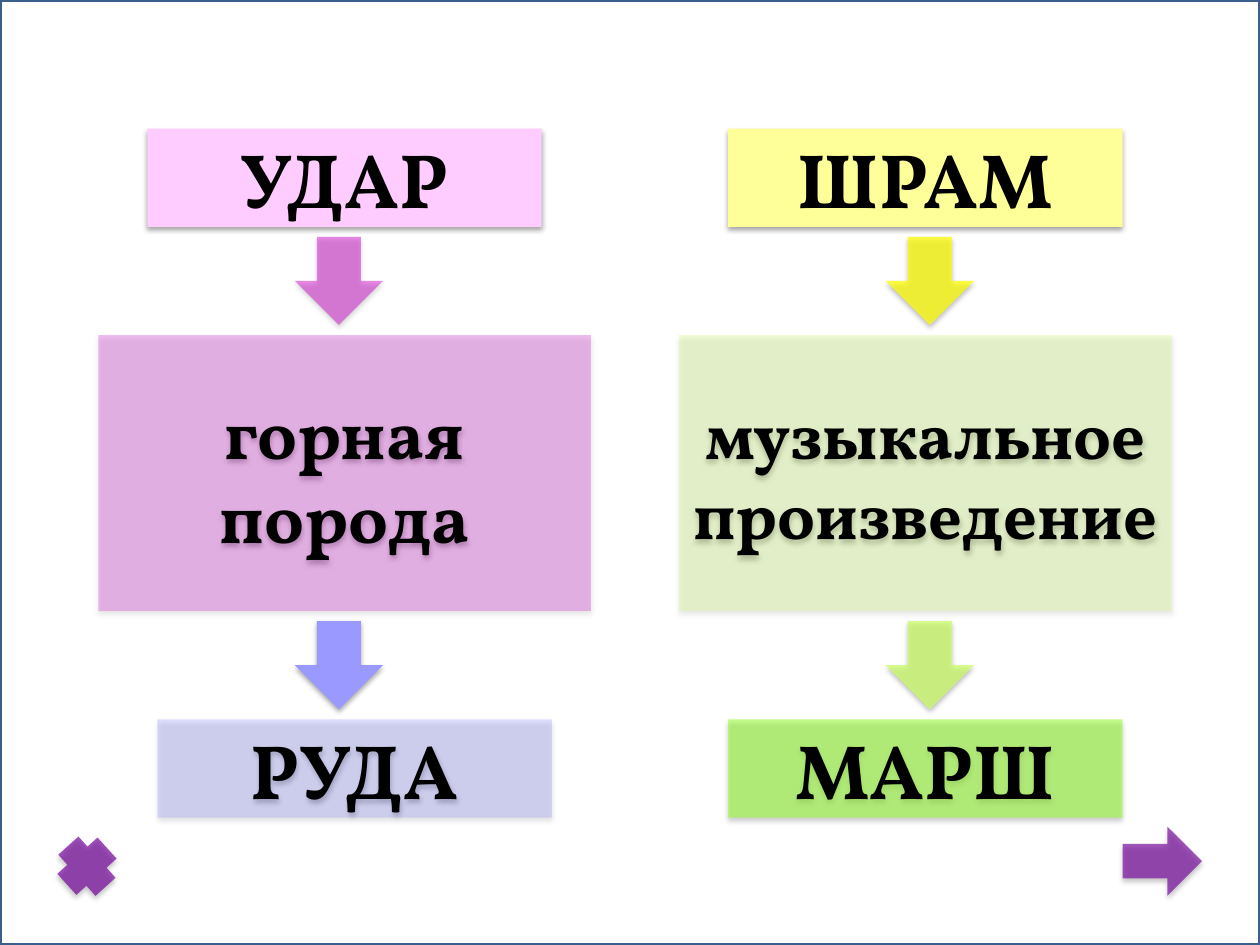
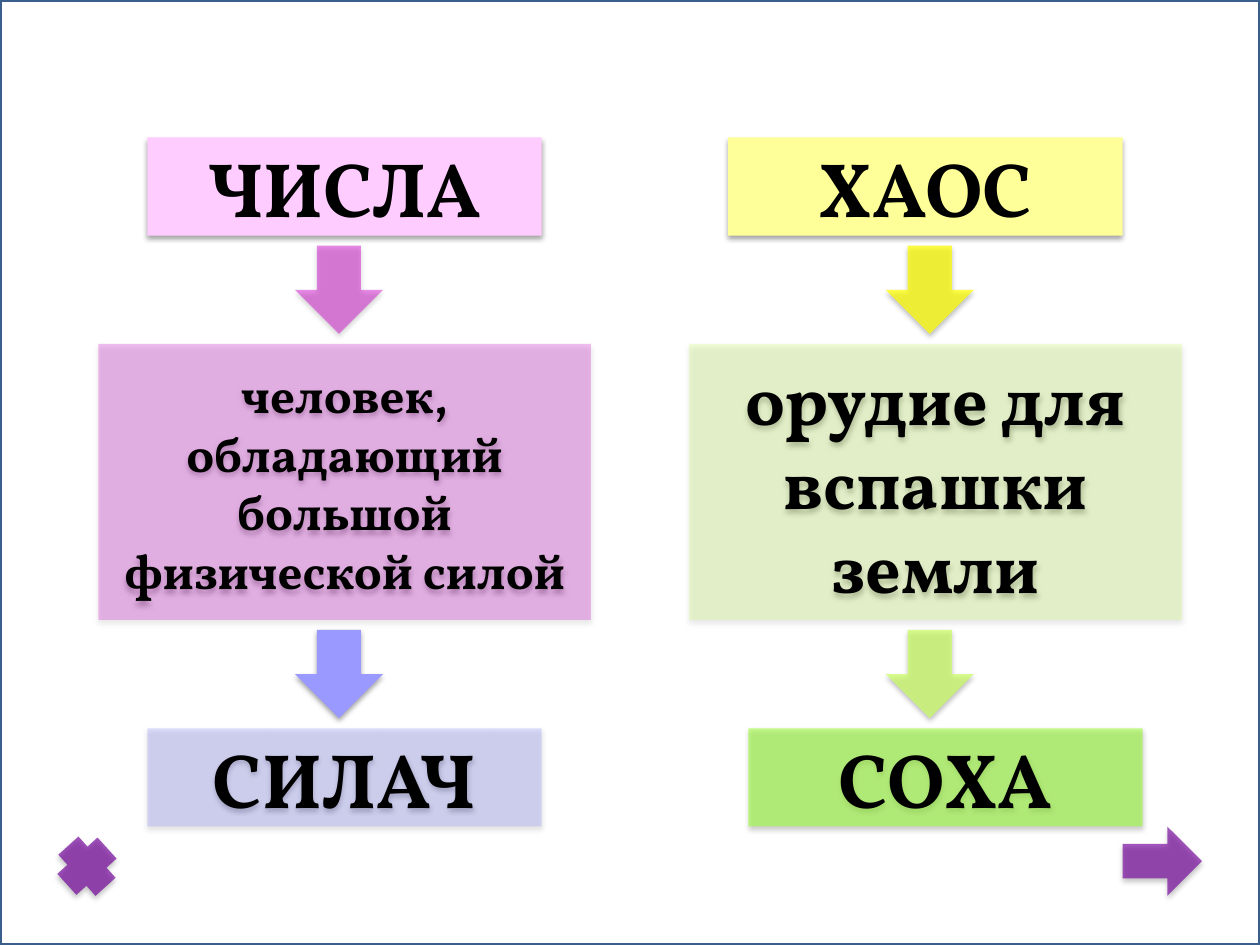
from dataclasses import dataclass

from pptx import Presentation
from pptx.dml.color import RGBColor
from pptx.enum.shapes import MSO_SHAPE
from pptx.enum.text import MSO_ANCHOR, PP_ALIGN
from pptx.oxml import parse_xml
from pptx.oxml.ns import nsdecls, qn
from pptx.util import Inches, Pt


@dataclass(frozen=True)
class Tint:
    color: str
    opacity: int = 100


@dataclass(frozen=True)
class Palette:
    word: Tint
    first_arrow: Tint
    definition: Tint
    second_arrow: Tint
    answer: Tint


@dataclass(frozen=True)
class Theme:
    font: str = "Vollkorn"
    word_size: int = 44
    text: str = "000000"
    frame_fill: Tint = Tint("FFFFFF", 28)
    frame_line: str = "3A5F8C"
    next_button: Tint = Tint("72009A", 65)
    close_button: Tint = Tint("72009A", 67)
    pink: Palette = Palette(Tint("FFCCFF"), Tint("CC00CC", 45), Tint("CC00CC", 25),
                            Tint("9999FF"), Tint("9999FF", 31))
    green: Palette = Palette(Tint("FFFF99"), Tint("FFFF00", 72), Tint("CCFF66", 25),
                             Tint("CCFF66", 72), Tint("99FF33", 56))


@dataclass(frozen=True)
class Chain:
    """An anagram: word, definition, answer; shifts are inches from the column."""
    word: str
    definition: str
    answer: str
    definition_size: int
    word_shift: float
    answer_shift: float
    definition_shift: float = 0


THEME = Theme()
SLIDE_SIZE = (10, 7.5)
COLUMNS = ((0.78, THEME.pink), (5.47, THEME.green))
WORD_SIZE = (3.13, 0.78)
DEFINITION_SIZE = (3.91, 2.19)
ARROW_SIZE = (0.7, 0.7)
ARROW_SHIFT = 1.56
GAP = 0.08

# Top of the chains, then the left and the right chain of each slide
SLIDES = (
    (1.02, (Chain("УДАР", "горная порода", "РУДА", 40, 0.39, 0.47),
            Chain("ШРАМ", "музыкальное произведение", "МАРШ", 38, 0.31, 0.31, -0.08))),
    (1.09, (Chain("ЧИСЛА", "человек, обладающий большой физической силой", "СИЛАЧ",
                  28, 0.39, 0.39),
            Chain("ХАОС", "орудие для вспашки земли", "СОХА", 40, 0.31, 0.47))),
)


def add_figure(slide, preset, left, top, size, tint):
    figure = slide.shapes.add_shape(preset, Inches(left), Inches(top),
                                    *(Inches(side) for side in size))
    figure.fill.solid()
    figure.fill.fore_color.rgb = RGBColor.from_string(tint.color)
    if tint.opacity < 100:
        color = figure.element.spPr.find(qn("a:solidFill"))[0]
        color.append(parse_xml(
            f'<a:alpha {nsdecls("a")} val="{tint.opacity * 1000}"/>'))
    figure.line.fill.background()
    figure.shadow.inherit = False
    return figure


def add_soft_shadow(figure):
    effects = figure.element.spPr.find(qn("a:effectLst"))
    effects.append(parse_xml(
        f'<a:outerShdw {nsdecls("a")} blurRad="{Pt(3.1)}" dist="{Pt(1.8)}" '
        'dir="5400000" rotWithShape="0"><a:srgbClr val="000000">'
        '<a:alpha val="35000"/></a:srgbClr></a:outerShdw>'))


def add_raised(slide, preset, left, top, size, tint):
    figure = add_figure(slide, preset, left, top, size, tint)
    add_soft_shadow(figure)
    return figure


def add_card(slide, left, top, size, tint, text, text_size):
    card = add_raised(slide, MSO_SHAPE.RECTANGLE, left, top, size, tint)
    frame = card.text_frame
    frame.word_wrap = True
    frame.vertical_anchor = MSO_ANCHOR.MIDDLE
    paragraph = frame.paragraphs[0]
    paragraph.text = text
    paragraph.alignment = PP_ALIGN.CENTER
    font = paragraph.font
    font.name, font.size, font.bold = THEME.font, Pt(text_size), True
    font.color.rgb = RGBColor.from_string(THEME.text)


def add_chain(slide, left, top, chain, palette):
    """Stack word, arrow, definition, arrow and answer with equal gaps."""
    cards = (
        (chain.word, THEME.word_size, chain.word_shift, WORD_SIZE,
         palette.word, palette.first_arrow),
        (chain.definition, chain.definition_size, chain.definition_shift,
         DEFINITION_SIZE, palette.definition, palette.second_arrow),
        (chain.answer, THEME.word_size, chain.answer_shift, WORD_SIZE,
         palette.answer, None),
    )
    for text, text_size, shift, size, tint, arrow_tint in cards:
        add_card(slide, left + shift, top, size, tint, text, text_size)
        top += size[1] + GAP
        if arrow_tint:
            add_raised(slide, MSO_SHAPE.DOWN_ARROW, left + ARROW_SHIFT, top,
                       ARROW_SIZE, arrow_tint)
            top += ARROW_SIZE[1] + GAP


def add_buttons(slide, left, top):
    """Close button at the left and next button at the right of the bottom band."""
    add_raised(slide, MSO_SHAPE.RIGHT_ARROW, left + 8.44, top, (0.63, 0.55),
               THEME.next_button)
    close = add_raised(slide, MSO_SHAPE.CROSS, left, top + 0.1, (0.44, 0.43),
                       THEME.close_button)
    close.rotation = 47.9


def add_master_frame(prs, slide):
    """Draw the page frame, then move it behind everything on the master."""
    frame = add_figure(slide, MSO_SHAPE.RECTANGLE, 0, 0, SLIDE_SIZE, THEME.frame_fill)
    frame.line.color.rgb = RGBColor.from_string(THEME.frame_line)
    frame.line.width = Pt(2)
    prs.slide_master.shapes.element.insert(2, frame.element)


def main():
    prs = Presentation()
    prs.slide_width, prs.slide_height = (Inches(side) for side in SLIDE_SIZE)
    blank = prs.slide_layouts.get_by_name("Blank")
    for number, (top, chains) in enumerate(SLIDES):
        slide = prs.slides.add_slide(blank)
        if number == 0:
            add_master_frame(prs, slide)
        for (left, palette), chain in zip(COLUMNS, chains):
            add_chain(slide, left, top, chain, palette)
        add_buttons(slide, 0.47, 6.56)
    prs.save("out.pptx")


if __name__ == "__main__":
    main()
